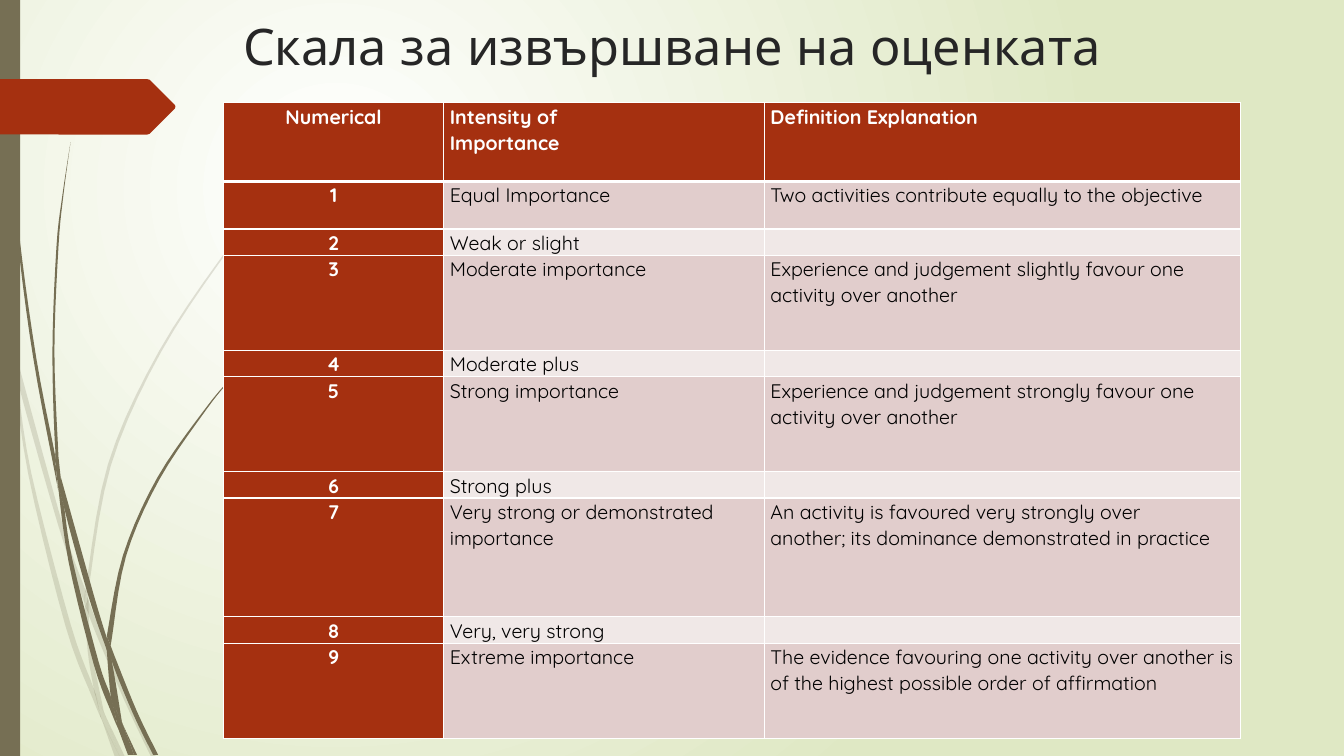
from dataclasses import dataclass

from lxml import etree
from pptx import Presentation
from pptx.dml.color import RGBColor
from pptx.enum.shapes import MSO_SHAPE
from pptx.enum.text import MSO_ANCHOR, MSO_AUTO_SIZE, PP_ALIGN
from pptx.oxml.ns import qn
from pptx.util import Pt

RECTANGLE = MSO_SHAPE.RECTANGLE
TOP = MSO_ANCHOR.TOP
NO_AUTOFIT = MSO_AUTO_SIZE.NONE
LEFT, CENTER = PP_ALIGN.LEFT, PP_ALIGN.CENTER
TITLE_ONLY = 5


@dataclass(frozen=True)
class Theme:
    font: str = "Quicksand"
    title_size: float = 36
    table_size: float = 14
    title: str = "262626"
    text: str = "000000"
    white: str = "FFFFFF"
    accent: str = "A53010"
    grass: str = "766F54"
    glow: str = "DFE8C4"
    odd_band: str = "E1CDCC"
    even_band: str = "F0E8E7"


THEME = Theme()

SCALE = [
    ("Numerical", "Intensity of\nImportance", "Definition Explanation"),
    ("1", "Equal Importance", "Two activities contribute equally to the objective"),
    ("2", "Weak or slight", ""),
    ("3", "Moderate importance",
     "Experience and judgement slightly favour one activity over another"),
    ("4", "Moderate plus", ""),
    ("5", "Strong importance",
     "Experience and judgement strongly favour one activity over another"),
    ("6", "Strong plus", ""),
    ("7", "Very strong or demonstrated importance",
     "An activity is favoured very strongly over\n"
     "another; its dominance demonstrated in practice"),
    ("8", "Very, very strong", ""),
    ("9", "Extreme importance",
     "The evidence favouring one activity over another is "
     "of the highest possible order of affirmation"),
]
COLUMN_WIDTHS = [157, 229, 340.5]
ROW_HEIGHTS = [56.2, 33.95, 18.8, 67.9, 18.8, 67.9, 18.8, 84.9, 18.8, 67.9]

# A piece of grass has two curved sides, drawn on a grid of 0.72 points.
GRASS_GRID = 0.72
PALE_GRASS = [
    ([(11, 350), (9, 322), (0, 282)], [(0, 299), (10, 344), (11, 350)]),
    ([(14, 345), (17, 376), (58, 522), (84, 599)], [(85, 586), (62, 520), (14, 345)]),
    ([(88, 596), (88, 610), (123, 694), (150, 751)], [(155, 751), (127, 692), (92, 607)]),
    ([(119, 751), (124, 751)], [(105, 711)]),
    ([(11, 350), (28, 470), (65, 621), (92, 693), (101, 714)],
     [(99, 707), (93, 683), (70, 619), (31, 469), (17, 376)]),
    ([(84, 599), (87, 646), (93, 683), (96, 692), (105, 711)],
     [(103, 706), (91, 646), (88, 610), (88, 608)]),
    ([(312, 153), (289, 175), (268, 197), (228, 244), (158, 348), (107, 461),
      (85, 584), (85, 586)],
     [(88, 596), (88, 584), (110, 462), (160, 349), (229, 245), (268, 198),
      (290, 175), (312, 154)]),
    ([(101, 714), (114, 751)], [(119, 751), (101, 714)]),
    ([(85, 586), (84, 599), (88, 608)], [(88, 610), (88, 596)]),
    ([(93, 683), (99, 707), (101, 714), (119, 751)], [(105, 711), (96, 692)]),
]
DARK_GRASS = [
    ([(3, 0), (4, 48), (7, 110), (17, 233), (33, 355), (56, 477), (57, 481)],
     [(55, 457), (55, 453), (36, 355), (19, 232), (8, 109), (5, 48), (4, 0)]),
    ([(60, 472), (64, 505), (88, 592), (106, 645)], [(106, 633), (93, 590), (60, 472)]),
    ([(110, 641), (111, 656), (132, 708), (152, 749)], [(157, 749), (136, 706), (113, 649)]),
    ([(57, 477), (68, 557), (93, 659), (111, 708), (117, 722)],
     [(116, 717), (110, 691), (98, 657), (72, 556), (64, 505)]),
    ([(70, 141), (62, 193), (56, 245), (52, 349), (55, 449), (60, 472)],
     [(58, 453), (54, 349), (58, 245), (63, 193), (70, 141)]),
    ([(133, 749), (136, 749)], [(122, 719)]),
    ([(55, 449), (55, 453), (57, 477), (64, 505)], [(60, 472), (55, 449)]),
    ([(260, 344), (245, 358), (231, 373), (204, 405), (156, 474), (122, 551), (106, 631)],
     [(110, 641), (111, 633), (125, 552), (158, 476), (205, 406), (231, 374),
      (245, 359), (261, 344)]),
    ([(117, 722), (127, 749)], [(131, 749), (117, 722)]),
    ([(106, 645), (110, 691), (116, 706), (122, 719)], [(121, 716), (111, 656), (106, 645)]),
    ([(106, 631), (106, 645), (111, 656)], [(110, 641), (106, 631)]),
    ([(110, 691), (116, 717), (117, 722), (130, 749)], [(133, 749), (122, 719), (116, 706)]),
]


def smooth(points, steps=5):
    """Return a Catmull-Rom curve through the points."""
    padded = [points[0], *points, points[-1]]
    curve = [
        tuple((2 * b + (c - a) * t + (2 * a - 5 * b + 4 * c - d) * t ** 2
               + (3 * b - a - 3 * c + d) * t ** 3) / 2 for a, b, c, d in zip(*span))
        for span in zip(padded, padded[1:], padded[2:], padded[3:])
        for t in (step / steps for step in range(steps))]
    return curve + [points[-1]]


def write(frame, text, size, color, bold=False, align=LEFT, spacing=1.0):
    frame.text = text
    for paragraph in frame.paragraphs:
        paragraph.alignment = align
        paragraph.line_spacing = spacing
        for run in paragraph.runs:
            run.font.name = THEME.font
            run.font.size = Pt(size)
            run.font.bold = bold
            run.font.color.rgb = RGBColor.from_string(color)
        if not paragraph.runs:  # an empty line takes its height from the end mark
            end_mark = etree.SubElement(paragraph._p, qn("a:endParaRPr"))
            end_mark.set("sz", str(int(size * 100)))
            etree.SubElement(end_mark, qn("a:latin")).set("typeface", THEME.font)


class SlideBuilder:
    def __init__(self, slide, theme):
        self.slide = slide
        self.theme = theme

    def background(self):
        fill = self.slide.background.fill
        fill.gradient()
        for stop, color in zip(fill.gradient_stops, (self.theme.white, self.theme.glow)):
            stop.color.rgb = RGBColor.from_string(color)
        gradient = self.slide._element.find(".//" + qn("a:gradFill"))
        gradient.remove(gradient.find(qn("a:lin")))
        circle = etree.SubElement(gradient, qn("a:path"))
        circle.set("path", "circle")
        focus = etree.SubElement(circle, qn("a:fillToRect"))
        for side, share in zip("ltrb", (50, 50, 100, 100)):
            focus.set(side, str(share * 1000))

    def paint(self, shape, color, opacity=100):
        shape.shadow.inherit = False
        shape.fill.solid()
        shape.fill.fore_color.rgb = RGBColor.from_string(color)
        shape.line.fill.background()
        if opacity < 100:
            solid = shape._element.spPr.find(qn("a:solidFill"))
            etree.SubElement(solid[0], qn("a:alpha")).set("val", str(opacity * 1000))

    def bar(self, left, top, width, height, color):
        self.paint(self.slide.shapes.add_shape(
            RECTANGLE, Pt(left), Pt(top), Pt(width), Pt(height)), color)

    def outline(self, points, color, opacity=100, unit=1):
        first, *rest = [(Pt(x * unit), Pt(y * unit)) for x, y in points]
        builder = self.slide.shapes.build_freeform(*first)
        builder.add_line_segments(rest, close=True)
        self.paint(builder.convert_to_shape(), color, opacity)

    def grass(self, pieces, opacity=100):
        for one_side, other_side in pieces:
            self.outline(smooth(one_side) + smooth(other_side),
                         self.theme.grass, opacity, GRASS_GRID)

    def title(self, text, left, top, width, height):
        title = self.slide.shapes.title
        title.left, title.top = Pt(left), Pt(top)
        title.width, title.height = Pt(width), Pt(height)
        frame = title.text_frame
        frame.word_wrap = True
        frame.auto_size = NO_AUTOFIT
        frame.vertical_anchor = TOP
        write(frame, text, self.theme.title_size, self.theme.title, align=CENTER)

    def cell_borders(self, cell, **widths):
        properties = cell._tc.get_or_add_tcPr()
        for i, side in enumerate("LRTB"):
            line = etree.Element(qn("a:ln" + side), w=str(Pt(widths.get(side, 1))))
            solid = etree.SubElement(line, qn("a:solidFill"))
            etree.SubElement(solid, qn("a:srgbClr")).set("val", self.theme.white)
            properties.insert(i, line)

    def table(self, rows, left, top, widths, heights):
        theme = self.theme
        table = self.slide.shapes.add_table(
            len(rows), len(widths), Pt(left), Pt(top), Pt(sum(widths)), Pt(sum(heights))).table
        for column, width in zip(table.columns, widths):
            column.width = Pt(width)
        for r, (row, height) in enumerate(zip(rows, heights)):
            table.rows[r].height = Pt(height)
            for c, text in enumerate(row):
                cell = table.cell(r, c)
                heading = r == 0 or c == 0
                band = theme.odd_band if r % 2 else theme.even_band
                cell.margin_left = cell.margin_right = Pt(4.5)
                cell.margin_top = cell.margin_bottom = 0
                cell.fill.solid()
                cell.fill.fore_color.rgb = RGBColor.from_string(theme.accent if heading else band)
                self.cell_borders(cell, B=3 if r == 0 else 1)
                write(cell.text_frame, text, theme.table_size,
                      theme.white if heading else theme.text, bold=heading,
                      align=LEFT if c else CENTER, spacing=1.07)


def main():
    deck = Presentation()
    deck.slide_width, deck.slide_height = Pt(960), Pt(540)
    page = SlideBuilder(deck.slides.add_slide(deck.slide_layouts[TITLE_ONLY]), THEME)
    page.background()
    page.grass(PALE_GRASS, opacity=20)
    page.grass(DARK_GRASS)
    page.bar(0, 0, 14.4, 540, THEME.grass)
    page.outline([(0, 56.5), (105, 56.5), (107, 57), (125, 75), (125.3, 76.2),
                  (125, 77.5), (107, 95.5), (105, 96.2), (0, 96)], THEME.accent)
    page.title("Скала за извършване на оценката", 66, 7, 828, 66)
    page.table(SCALE, 159.84, 73.44, COLUMN_WIDTHS, ROW_HEIGHTS)
    deck.save("out.pptx")


if __name__ == "__main__":
    main()
